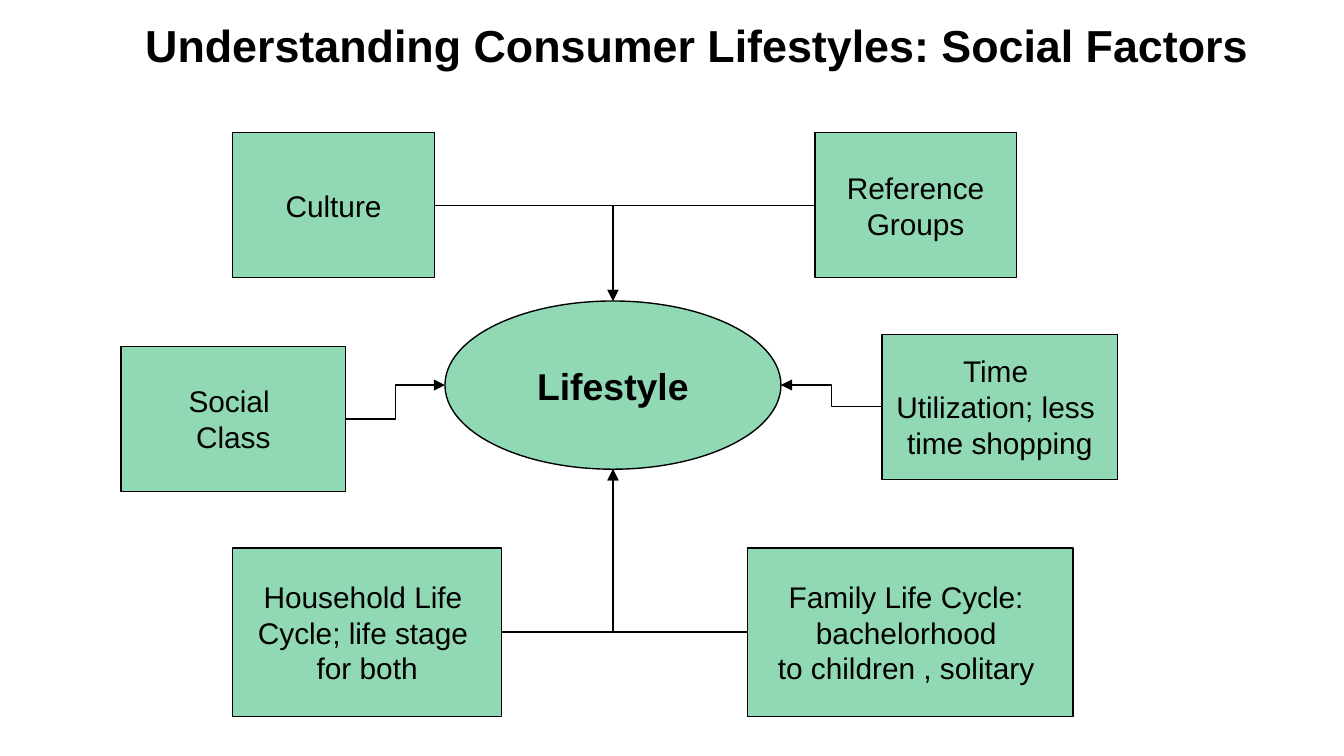
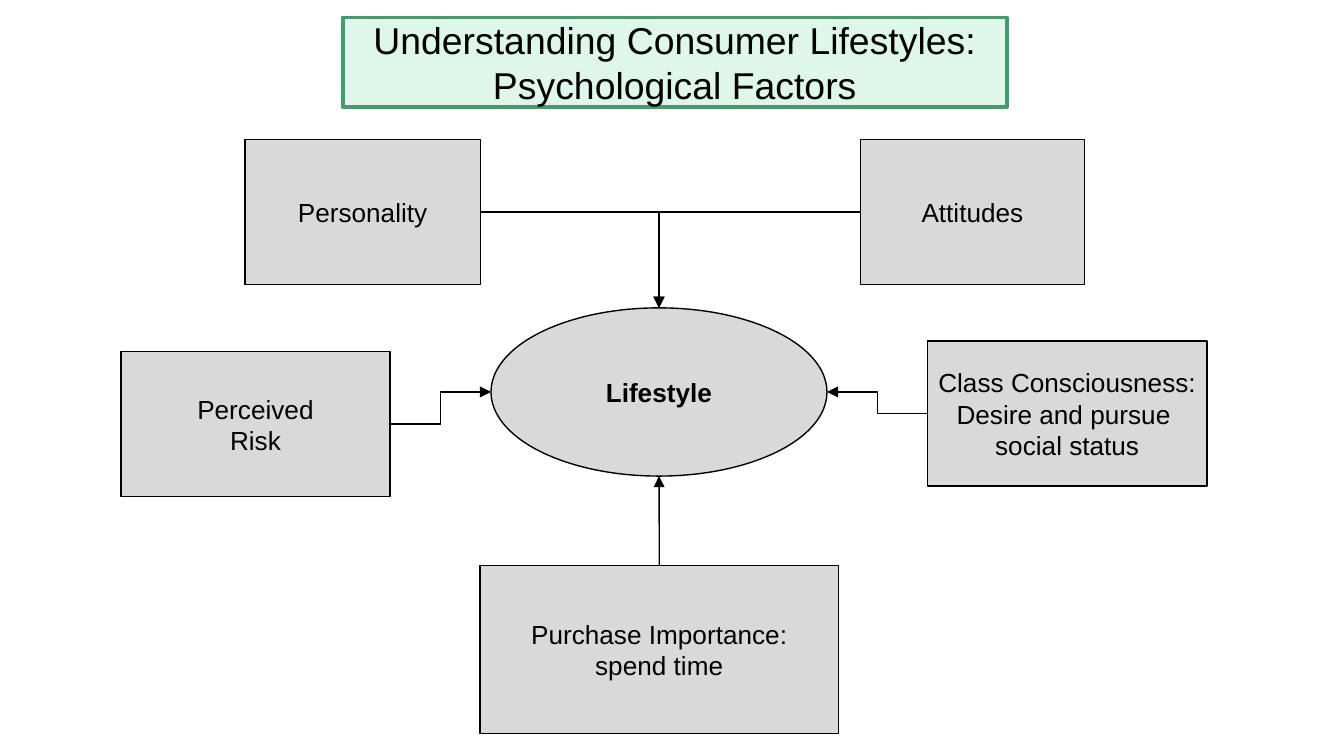
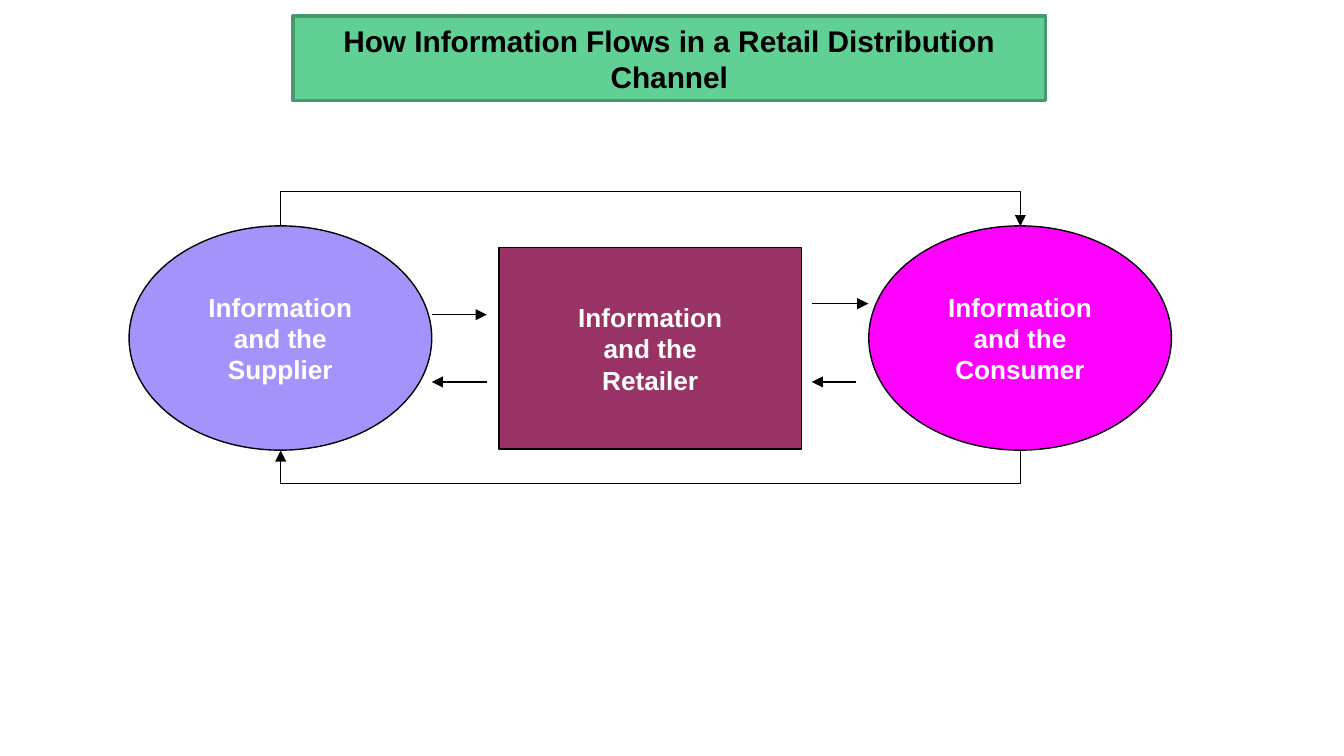
from dataclasses import dataclass

from lxml.etree import SubElement
from pptx import Presentation
from pptx.dml.color import RGBColor
from pptx.enum.shapes import MSO_CONNECTOR, MSO_SHAPE
from pptx.enum.text import MSO_ANCHOR, MSO_AUTO_SIZE, PP_ALIGN
from pptx.oxml.ns import qn
from pptx.util import Cm, Pt


@dataclass(frozen=True)
class Theme:
    font: str = "Arial"
    black: str = "000000"
    white: str = "FFFFFF"
    green: str = "91D9B5"
    grey: str = "D9D9D9"
    mint: str = "DFF6EA"
    leaf: str = "61D095"
    edge: str = "489A6E"
    lilac: str = "A493FB"
    plum: str = "993366"
    pink: str = "FF00FF"
    head: int = 24
    large: int = 20
    mid: int = 16
    small: int = 14
    thin: float = 0.75
    thick: float = 2


THEME = Theme()
SIDES = "tlbr"  # order of the connection sites on a rectangle


def apply(target, **values):
    for name, value in values.items():
        setattr(target, name, value)


def paint(shape, fill, edge=THEME.black, width=THEME.thin):
    shape.fill.solid()
    shape.fill.fore_color.rgb = RGBColor.from_string(fill)
    shape.line.color.rgb = RGBColor.from_string(edge)
    shape.line.width = Pt(width)


def write(shape, text, size, color=THEME.black, bold=False,
          align=PP_ALIGN.CENTER, anchor=MSO_ANCHOR.MIDDLE, wrap=False):
    frame = shape.text_frame
    frame.text = text
    apply(frame, word_wrap=wrap, auto_size=MSO_AUTO_SIZE.NONE,
          vertical_anchor=anchor)
    for para in frame.paragraphs:
        para.alignment = align
        apply(para.font, name=THEME.font, size=Pt(size), bold=bold)
        para.font.color.rgb = RGBColor.from_string(color)


def add_title(slide, text, box, size, fill=None, **style):
    """Fill the title placeholder; with a fill it becomes a rounded band."""
    title = slide.shapes.title
    names = ("left", "top", "width", "height")
    apply(title, **{name: Cm(n) for name, n in zip(names, box)})
    if fill:
        geom = SubElement(title._element.spPr, qn("a:prstGeom"),
                          prst="roundRect")
        SubElement(geom, qn("a:avLst"))
        paint(title, fill, THEME.edge, THEME.thick)
    write(title, text, size, wrap=True, **style)


def add_node(slide, kind, text, box, fill, size, **style):
    node = slide.shapes.add_shape(kind, *(Cm(n) for n in box))
    node.shadow.inherit = False
    paint(node, fill)
    write(node, text, size, **style)
    return node


def add_arrow(slide, kind, start, end):
    arrow = slide.shapes.add_connector(kind, *start, *end)
    arrow.line.color.rgb = RGBColor.from_string(THEME.black)
    arrow.line.width = Pt(THEME.thin)
    props = arrow._element.spPr
    SubElement(props.find(qn("a:ln")), qn("a:tailEnd"), type="triangle")
    SubElement(props, qn("a:effectLst"))
    return arrow


def site(node, side):
    """Return the middle of one side of a node."""
    x = {"l": 0, "r": node.width}.get(side, node.width // 2)
    y = {"t": 0, "b": node.height}.get(side, node.height // 2)
    return node.left + x, node.top + y


def glue(arrow, *ends):
    """Tie both ends of an arrow to nodes; an oval has twice the sites."""
    props = arrow._element.find(".//" + qn("p:cNvCxnSpPr"))
    for tag, (node, side) in zip(("a:stCxn", "a:endCxn"), ends):
        step = 2 if node.auto_shape_type == MSO_SHAPE.OVAL else 1
        SubElement(props, qn(tag), id=str(node.shape_id),
                   idx=str(SIDES.index(side) * step))


def join(slide, node, out, hub, into):
    """Link two nodes: straight when vertical, else with one or two bends."""
    upright = [side in "tb" for side in (out, into)]
    kind = MSO_CONNECTOR.STRAIGHT if all(upright) else MSO_CONNECTOR.ELBOW
    arrow = add_arrow(slide, kind, site(node, out), site(hub, into))
    if upright == [False, True]:
        geom = arrow._element.spPr.find(qn("a:prstGeom"))
        geom.set("prst", "bentConnector2")
    glue(arrow, (node, out), (hub, into))


def loop(slide, first, last, side, reach=0.64):
    """Run an arrow round the outside, from one node to another."""
    (x1, y), (x2, _) = site(first, side), site(last, side)
    mid, half, slim = (x1 + x2) // 2, (x2 - x1) // 2, Cm(0.01)
    arrow = add_arrow(slide, MSO_CONNECTOR.ELBOW,
                      (mid, y + half), (mid + slim, y - half))
    props = arrow._element.spPr
    props.find(qn("a:xfrm")).set("rot", "5400000")
    bend = round(Cm(reach) / slim * 100000) * (-1 if side == "t" else 1)
    SubElement(props.find(qn("a:prstGeom")).find(qn("a:avLst")), qn("a:gd"),
               name="adj1", fmla=f"val {bend}")
    glue(arrow, (first, side), (last, side))


def add_factors(slide, box, hub_left, hub_size, fill, size, factors):
    """Draw the hub and the factors that lead into it."""
    left, top = box
    hub = add_node(slide, MSO_SHAPE.OVAL, "Lifestyle",
                   (left + hub_left, top + 3.18, 6.35, 3.18),
                   fill, hub_size, bold=True)
    for text, x, y, width, out, into in factors:
        height = 3.18 if into == "b" else 2.74
        node = add_node(slide, MSO_SHAPE.RECTANGLE, text,
                        (left + x, top + y, width, height), fill, size)
        join(slide, node, out, hub, into)


def add_flow(slide, box):
    """Draw the three parties with the arrows between and around them."""
    left, top = box
    parties = (
        ("Supplier", MSO_SHAPE.OVAL, 0, 4.24, THEME.lilac),
        ("Retailer", MSO_SHAPE.RECTANGLE, 0.41, 3.81, THEME.plum),
        ("Consumer", MSO_SHAPE.OVAL, 0, 4.24, THEME.pink),
    )
    nodes = [
        add_node(slide, kind, f"Information\nand the\n{name}",
                 (left + i * 6.99, top + y, 5.72, height), fill,
                 THEME.small, color=THEME.white, bold=True)
        for i, (name, kind, y, height, fill) in enumerate(parties)
    ]
    loop(slide, nodes[0], nodes[2], "t")
    loop(slide, nodes[2], nodes[0], "b")
    for x1, x2, y in ((5.72, 6.76, 1.68), (6.76, 5.72, 2.95),
                      (12.9, 13.97, 1.47), (13.74, 12.9, 2.95)):
        add_arrow(slide, MSO_CONNECTOR.STRAIGHT,
                  (Cm(left + x1), Cm(top + y)), (Cm(left + x2), Cm(top + y)))


def social(slide):
    add_title(slide, "Understanding Consumer Lifestyles: Social Factors",
              (2.49, 0.2, 22.02, 1.37), THEME.head, bold=True,
              align=PP_ALIGN.LEFT, anchor=MSO_ANCHOR.TOP)
    add_factors(slide, (2.29, 2.51), 6.12, THEME.large, THEME.green, THEME.mid, (
        ("Culture", 2.11, 0, 3.81, "r", "t"),
        ("Reference\nGroups", 13.11, 0, 3.81, "l", "t"),
        ("Social \nClass", 0, 4.04, 4.24, "r", "l"),
        ("Time \nUtilization; less \ntime shopping", 14.38, 3.81, 4.45, "l", "r"),
        ("Household Life \nCycle; life stage \nfor both",
         2.11, 7.85, 5.08, "r", "b"),
        ("Family Life Cycle: \nbachelorhood \nto children , solitary ",
         11.84, 7.85, 6.15, "l", "b"),
    ))


def psyche(slide):
    add_title(slide, "Understanding Consumer Lifestyles: Psychological Factors",
              (6.48, 0.33, 12.55, 1.7), THEME.large, THEME.mint)
    add_factors(slide, (2.29, 2.64), 6.99, THEME.small, THEME.grey, THEME.small, (
        ("Personality", 2.34, 0, 4.45, "r", "t"),
        ("Attitudes", 13.97, 0, 4.24, "l", "t"),
        ("Perceived\nRisk", 0, 4.01, 5.08, "r", "l"),
        ("Class Consciousness:\nDesire and pursue \nsocial status",
         15.24, 3.81, 5.28, "l", "r"),
        ("Purchase Importance:\nspend time", 6.78, 8.05, 6.78, "t", "b"),
    ))


def channel(slide):
    add_title(slide, "How Information Flows in a Retail Distribution Channel",
              (5.54, 0.3, 14.22, 1.6), THEME.mid, THEME.leaf, bold=True)
    add_flow(slide, (2.44, 4.27))


def main():
    deck = Presentation()
    apply(deck, slide_width=Cm(25.4), slide_height=Cm(14.29))
    for build in (social, psyche, channel):
        build(deck.slides.add_slide(deck.slide_layouts[5]))
    deck.save("out.pptx")


if __name__ == "__main__":
    main()
